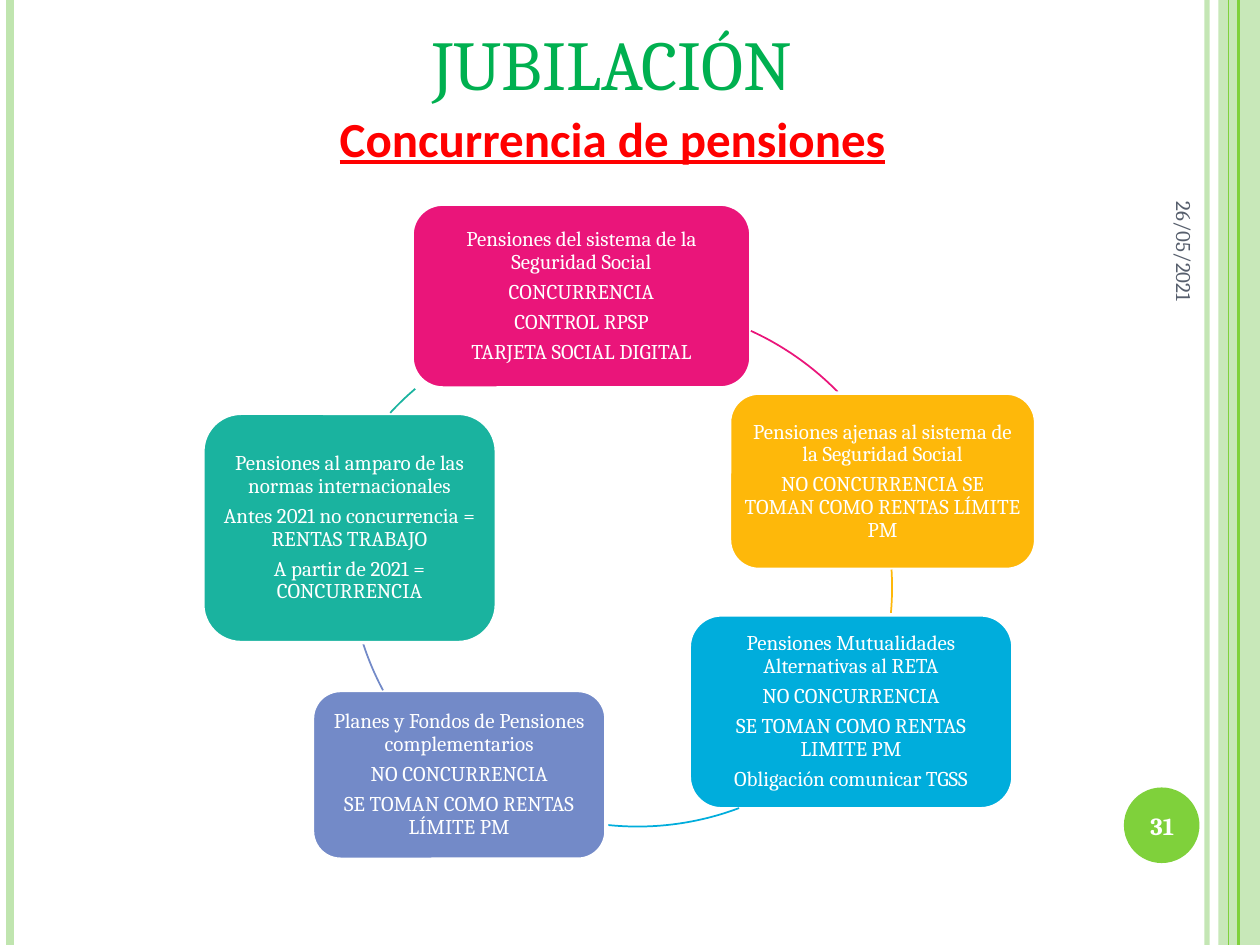
from dataclasses import dataclass

from lxml import etree
from pptx import Presentation
from pptx.dml.color import RGBColor
from pptx.enum.shapes import MSO_CONNECTOR, MSO_SHAPE
from pptx.enum.text import MSO_ANCHOR, MSO_AUTO_SIZE, PP_ALIGN
from pptx.oxml.ns import qn
from pptx.util import Inches, Pt

STRAIGHT = MSO_CONNECTOR.STRAIGHT
RECT, OVAL = MSO_SHAPE.RECTANGLE, MSO_SHAPE.OVAL
ROUNDED, ARC = MSO_SHAPE.ROUNDED_RECTANGLE, MSO_SHAPE.ARC
TOP, MIDDLE, BOTTOM = MSO_ANCHOR.TOP, MSO_ANCHOR.MIDDLE, MSO_ANCHOR.BOTTOM
CENTER, RIGHT = PP_ALIGN.CENTER, PP_ALIGN.RIGHT


@dataclass(frozen=True)
class Theme:
    serif: str = "Cambria"
    sans: str = "Calibri"
    green: str = "7FD13B"
    pale_green: str = "C0E5AF"
    title: str = "00B050"
    subtitle: str = "FF0000"
    date: str = "575F6D"
    white: str = "FFFFFF"
    title_size: int = 50
    subtitle_size: int = 28
    number_size: int = 14
    body_size: int = 12


THEME = Theme()
SLIDE_HEIGHT = 7.5
ARC_DIAMETER = 4.58

# x, colour, width in points, opacity in percent
RULES = [
    (9.58, THEME.pale_green, 3, 93),
    (0.08, THEME.pale_green, 4.5, 100),
    (9.83, THEME.green, 1.5, 100),
    (9.75, THEME.green, 0.75, 100),
]

# Each step: colour, box, arc corner, arc start and end in clockwise degrees, lines
PENSIONS = [
    ("EA157A", (3.27, 1.62, 2.69, 1.46), (2.72, 2.42), (294.5, 315.7),
     ["Pensiones del sistema de la Seguridad Social", "CONCURRENCIA",
      "CONTROL RPSP", "TARJETA SOCIAL DIGITAL"]),
    ("FEB80A", (5.79, 3.12, 2.43, 1.4), (2.5, 2.37), (356.5, 5.2),
     ["Pensiones ajenas al sistema de la Seguridad Social",
      "NO CONCURRENCIA SE TOMAN COMO RENTAS LÍMITE PM"]),
    ("00ADDC", (5.47, 4.88, 2.57, 1.54), (2.77, 1.98), (69.4, 95.8),
     ["Pensiones Mutualidades Alternativas al RETA", "NO CONCURRENCIA",
      "SE TOMAN COMO RENTAS LIMITE PM", "Obligación comunicar TGSS"]),
    ("738AC8", (2.48, 5.48, 2.33, 1.34), (2.77, 2.11), (151.9, 162.2),
     ["Planes y Fondos de Pensiones complementarios", "NO CONCURRENCIA",
      "SE TOMAN COMO RENTAS LÍMITE PM"]),
    ("1AB39F", (1.61, 3.28, 2.33, 1.82), (2.49, 2.54), (222.7, 229.6),
     ["Pensiones al amparo de las normas internacionales",
      "Antes 2021 no concurrencia = RENTAS TRABAJO",
      "A partir de 2021 = CONCURRENCIA"]),
]


def rgb(code):
    return RGBColor.from_string(code)


def inches(values):
    return [Inches(value) for value in values]


def set_opacity(shape, percent):
    """Apply opacity to the first solid colour of a shape or line."""
    if percent < 100:
        color = next(shape._element.spPr.iter(qn("a:srgbClr")))
        etree.SubElement(color, qn("a:alpha")).set("val", str(percent * 1000))


def write(shape, lines, color, size, font=THEME.serif, align=CENTER,
          anchor=MIDDLE, paragraph=None, **styles):
    frame = shape.text_frame
    frame.word_wrap = True
    frame.auto_size = MSO_AUTO_SIZE.NONE
    frame.vertical_anchor = anchor
    frame.text = "\n".join(lines)
    paragraph_format = {"alignment": align, **(paragraph or {})}
    font_format = {"name": font, "size": Pt(size), **styles}
    for line in frame.paragraphs:
        for name, value in paragraph_format.items():
            setattr(line, name, value)
        for run in line.runs:
            for name, value in font_format.items():
                setattr(run.font, name, value)
            run.font.color.rgb = rgb(color)


def add_filled(slide, kind, box, color, opacity=100):
    shape = slide.shapes.add_shape(kind, *inches(box))
    shape.shadow.inherit = False
    shape.fill.solid()
    shape.fill.fore_color.rgb = rgb(color)
    shape.line.fill.background()
    set_opacity(shape, opacity)
    return shape


def add_rule(slide, x, color, width, opacity):
    rule = slide.shapes.add_connector(
        STRAIGHT, *inches((x, 0, x, SLIDE_HEIGHT)))
    rule.line.color.rgb = rgb(color)
    rule.line.width = Pt(width)
    set_opacity(rule, opacity)
    etree.SubElement(rule._element.spPr, qn("a:effectLst"))


def add_label(slide, box, text, color, size, rotation=0, **styles):
    label = slide.shapes.add_textbox(*inches(box))
    label.rotation = rotation
    write(label, [text], color, size, **styles)


def add_pension(slide, color, box, lines):
    card = add_filled(slide, ROUNDED, box, color)
    card.line.color.rgb = rgb(THEME.white)
    card.line.width = Pt(2)
    for side in ("left", "top", "right", "bottom"):
        setattr(card.text_frame, f"margin_{side}", Inches(0.05))
    write(card, lines, THEME.white, THEME.body_size,
          paragraph={"line_spacing": 0.9, "space_after": Pt(4.2)})


def add_cycle_arc(slide, color, corner, angles):
    arc = slide.shapes.add_shape(
        ARC, *inches((*corner, ARC_DIAMETER, ARC_DIAMETER)))
    arc.shadow.inherit = False
    arc.fill.background()
    arc.line.color.rgb = rgb(color)
    arc.line.width = Pt(1)
    for index, degrees in enumerate(angles):
        # Angles are stored in 1/60000 degree, adjustments in 1/100000
        arc.adjustments[index] = degrees * 0.6


def add_title(slide, text):
    title = slide.shapes.title
    title.left, title.top, title.width, title.height = inches(
        (0, -0.35, 9.72, 1.26))
    write(title, [text], THEME.title, THEME.title_size, anchor=BOTTOM)
    run = title.text_frame.paragraphs[0].runs[0]
    run._r.get_or_add_rPr().set("cap", "small")


def main():
    deck = Presentation()
    deck.slide_width, deck.slide_height = inches((10, SLIDE_HEIGHT))
    slide = deck.slides.add_slide(deck.slide_layouts[5])

    add_filled(slide, RECT, (9.67, 0, 0.33, SLIDE_HEIGHT),
               THEME.pale_green, 87)
    for rule in RULES:
        add_rule(slide, *rule)
    add_filled(slide, OVAL, (8.92, 6.25, 0.6, 0.6), THEME.green)

    add_label(slide, (8.3, 1.18, 2.2, 0.42), "26/05/2021", THEME.date,
              THEME.body_size, rotation=90, align=RIGHT)
    add_label(slide, (8.89, 6.27, 0.67, 0.57), "31", THEME.white,
              THEME.number_size, bold=True)
    add_label(slide, (0.15, 0.81, 9.42, 0.57), "Concurrencia de pensiones",
              THEME.subtitle, THEME.subtitle_size, font=THEME.sans,
              anchor=TOP, bold=True, underline=True)
    add_title(slide, "jubilación")

    for color, box, corner, angles, lines in PENSIONS:
        add_pension(slide, color, box, lines)
        add_cycle_arc(slide, color, corner, angles)

    deck.save("out.pptx")


if __name__ == "__main__":
    main()
